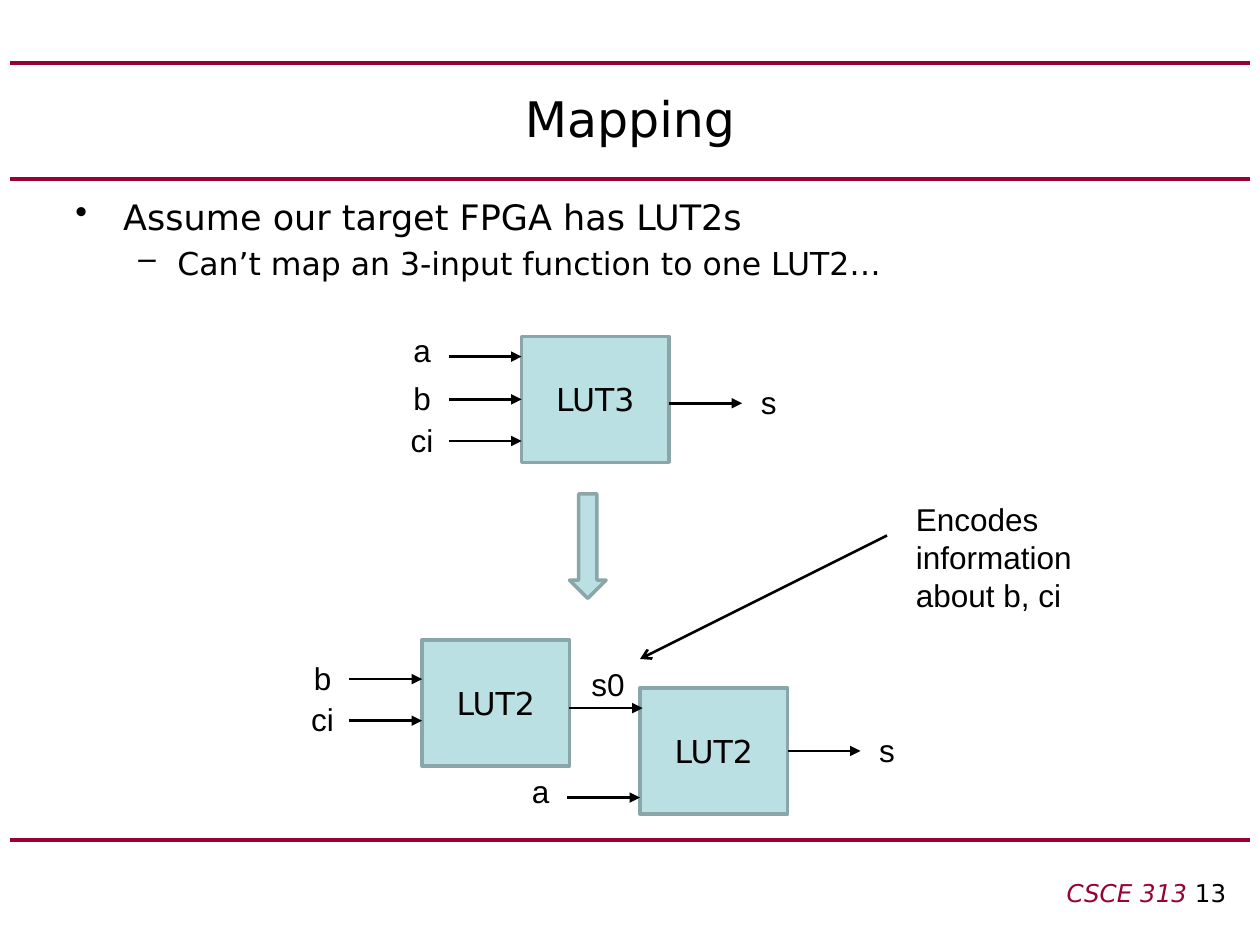
from dataclasses import dataclass

from lxml.etree import SubElement
from pptx import Presentation
from pptx.dml.color import RGBColor
from pptx.enum.shapes import MSO_CONNECTOR as Connector, MSO_SHAPE as Shape
from pptx.enum.text import MSO_ANCHOR as Anchor, PP_ALIGN as Align
from pptx.oxml.ns import qn
from pptx.util import Inches, Pt


@dataclass(frozen=True)
class Theme:
    ink: str = "000000"
    accent: str = "990033"
    block_fill: str = "BBE0E3"
    block_edge: str = "8AA6A8"
    heading_font: str = "DejaVu Sans"
    label_font: str = "Arial"
    title_size: int = 28
    lead_size: int = 20
    text_size: int = 18
    footer_size: int = 14
    rule_width: float = 2.25
    edge_width: float = 2
    wire_width: float = 1.5


class Diagram:
    BLOCK_W, BLOCK_H = 1.17, 1
    WIRE = 0.58
    LABEL = 0.42

    def __init__(self, slide, theme):
        self.shapes = slide.shapes
        self.theme = theme

    def style(self, target, size, font=None, color=None):
        target.font.size = Pt(size)
        target.font.name = font or self.theme.heading_font
        target.font.color.rgb = RGBColor.from_string(color or self.theme.ink)

    def text_frame(self, left, top, width, height, anchor=Anchor.TOP):
        frame = self.shapes.add_textbox(
            Inches(left), Inches(top), Inches(width), Inches(height)).text_frame
        frame.word_wrap = True
        frame.vertical_anchor = anchor
        return frame

    def text(self, words, left, top, width, height, size=None, font=None,
             align=Align.CENTER, anchor=Anchor.TOP):
        paragraph = self.text_frame(left, top, width, height, anchor).paragraphs[0]
        paragraph.text = words
        paragraph.alignment = align
        self.style(paragraph, size or self.theme.text_size, font)

    def label(self, words, left, top, width=LABEL, height=LABEL, align=Align.CENTER):
        self.text(words, left, top, width, height,
                  font=self.theme.label_font, align=align)

    def bullets(self, items, left, top, width, height):
        """Each item is (words, mark, size, indent, hang)."""
        frame = self.text_frame(left, top, width, height)
        for level, (words, mark, size, indent, hang) in enumerate(items):
            paragraph = frame.add_paragraph() if level else frame.paragraphs[0]
            paragraph.text = words
            paragraph.level = level
            if level:
                paragraph.space_before = Pt(size * 0.2)
            props = paragraph._p.get_or_add_pPr()
            props.set("marL", str(Inches(indent)))
            props.set("indent", str(-Inches(hang)))
            SubElement(props, qn("a:buChar"), char=mark)
            self.style(paragraph, size)

    def footer(self, course, number, left, top, width, height):
        paragraph = self.text_frame(left, top, width, height).paragraphs[0]
        paragraph.alignment = Align.RIGHT
        for words, color in ((course, self.theme.accent), (number, self.theme.ink)):
            run = paragraph.add_run()
            run.text = words
            self.style(run, self.theme.footer_size, color=color)
            run.font.italic = words == course

    def line(self, start, end, color=None, width=None, head=None):
        line = self.shapes.add_connector(
            Connector.STRAIGHT, *(Inches(v) for v in (*start, *end)))
        line.line.color.rgb = RGBColor.from_string(color or self.theme.ink)
        line.line.width = Pt(width or self.theme.wire_width)
        if head:
            SubElement(line.line._get_or_add_ln(), qn("a:tailEnd"), type=head)
        SubElement(line._element.spPr, qn("a:effectLst"))

    def rule(self, y):
        self.line((0.08, y), (9.92, y), self.theme.accent, self.theme.rule_width)

    def wire(self, left, y):
        self.line((left, y), (left + self.WIRE, y), head="triangle")

    def filled(self, kind, left, top, width, height):
        shape = self.shapes.add_shape(
            kind, Inches(left), Inches(top), Inches(width), Inches(height))
        shape.shadow.inherit = False
        shape.fill.solid()
        shape.fill.fore_color.rgb = RGBColor.from_string(self.theme.block_fill)
        shape.line.color.rgb = RGBColor.from_string(self.theme.block_edge)
        shape.line.width = Pt(self.theme.edge_width)
        return shape

    def lut(self, name, left, top, inputs=(), output=None):
        """Block with inputs (words, wire y, label top) and an output wire y."""
        frame = self.filled(Shape.RECTANGLE, left, top,
                            self.BLOCK_W, self.BLOCK_H).text_frame
        frame.vertical_anchor = Anchor.MIDDLE
        paragraph = frame.paragraphs[0]
        paragraph.text = name
        paragraph.alignment = Align.CENTER
        self.style(paragraph, self.theme.text_size)
        wire_left = left - self.WIRE
        for words, y, label_top in inputs:
            self.wire(wire_left, y)
            width = 0.58 if len(words) > 1 else self.LABEL
            center = wire_left - self.LABEL / 2
            self.label(words, center - width / 2, label_top, width)
        if output:
            right = left + self.BLOCK_W
            self.wire(right, output)
            self.label("s", right + self.WIRE, output - self.LABEL / 2)


def main():
    deck = Presentation()
    deck.slide_width, deck.slide_height = Inches(10), Inches(7.5)
    theme = Theme()
    diagram = Diagram(deck.slides.add_slide(deck.slide_layouts[6]), theme)

    # Frame: rules, title and footer
    for y in (0.5, 1.42, 6.67):
        diagram.rule(y)
    diagram.text("Mapping", 0.5, 0.5, 9, 0.87, theme.title_size, anchor=Anchor.MIDDLE)
    diagram.footer("CSCE 313 ", "13", 3.75, 6.92, 6.08, 0.33)

    # Statement
    diagram.bullets([
        ("Assume our target FPGA has LUT2s", "•", theme.lead_size, 0.38, 0.38),
        ("Can’t map an 3-input function to one LUT2…", "–", theme.text_size, 0.81, 0.31),
    ], 0.5, 1.5, 9, 5.08)

    # Three-input function
    diagram.lut("LUT3", 4.14, 2.67,
                [("a", 2.83, 2.58), ("b", 3.17, 2.96), ("ci", 3.5, 3.29)], output=3.2)
    diagram.filled(Shape.DOWN_ARROW, 4.52, 3.92, 0.29, 0.83)

    # Two chained two-input tables
    diagram.lut("LUT2", 3.35, 5.08, [("b", 5.39, 5.18), ("ci", 5.72, 5.51)])
    diagram.lut("LUT2", 5.08, 5.46, [("a", 6.33, 6.08)], output=5.96)
    diagram.wire(4.52, 5.62)
    diagram.label("s0", 4.5, 5.23, 0.65)

    # Note on the intermediate signal
    diagram.label("Encodes information about b, ci", 7.17, 3.92, 2.12, 1.01, Align.LEFT)
    diagram.line((7.04, 4.25), (5.08, 5.23), head="arrow")

    deck.save("out.pptx")


if __name__ == "__main__":
    main()
